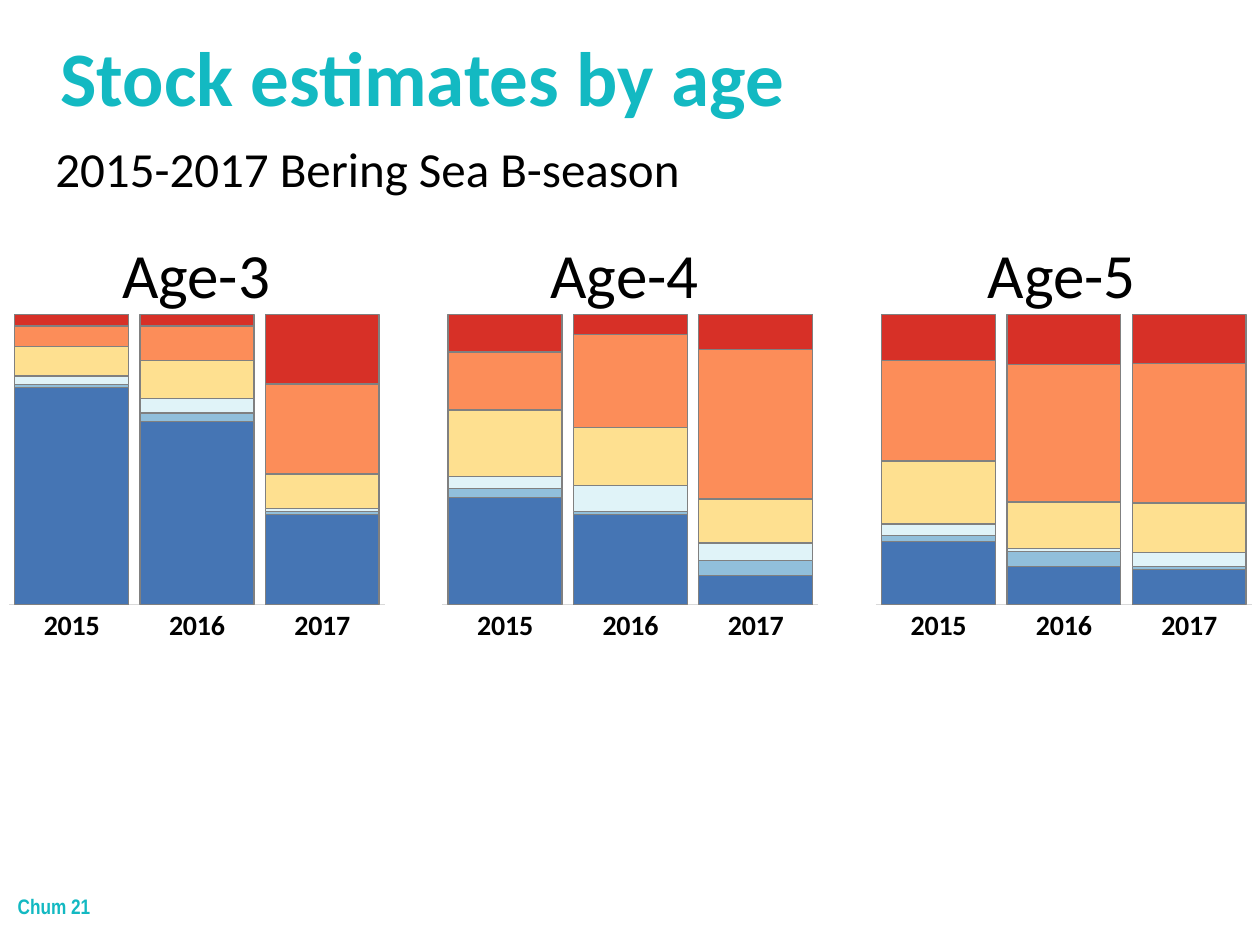
from dataclasses import dataclass

from lxml.etree import SubElement
from pptx import Presentation
from pptx.chart.data import CategoryChartData
from pptx.dml.color import RGBColor
from pptx.enum.chart import XL_CHART_TYPE, XL_TICK_MARK
from pptx.enum.text import MSO_ANCHOR, MSO_AUTO_SIZE, PP_ALIGN
from pptx.oxml.ns import qn
from pptx.util import Emu, Pt

SCALE = 9144  # EMU per px, 100 px to the inch

TEAL = RGBColor(0x13, 0xB9, 0xC2)
BLACK = RGBColor(0x00, 0x00, 0x00)
GREY = RGBColor(0x80, 0x80, 0x80)
PALE = RGBColor(0xD9, 0xD9, 0xD9)
STOCKS = [
    RGBColor(0x45, 0x75, 0xB4),
    RGBColor(0x91, 0xBF, 0xDB),
    RGBColor(0xE0, 0xF3, 0xF8),
    RGBColor(0xFE, 0xE0, 0x90),
    RGBColor(0xFC, 0x8D, 0x59),
    RGBColor(0xD7, 0x30, 0x27),
]
YEARS = ["2015", "2016", "2017"]
PLOT = {"x": 0.004, "y": 0.042, "w": 0.996, "h": 0.841}
LEFT, STEP = 6, 344  # first chart and distance to the next


@dataclass
class Box:
    x: int
    y: int
    w: int
    h: int

    def emu(self) -> list[Emu]:
        return [Emu(n * SCALE) for n in (self.x, self.y, self.w, self.h)]


@dataclass
class Style:
    size: int
    color: RGBColor = BLACK
    bold: bool = False
    face: str = "Calibri"


@dataclass
class Age:
    name: str
    label: int  # left edge of the heading
    rows: list[tuple[int, int, int]]  # one row per stock, one value per year


AGES = [
    Age("Age-3", 87, [(74, 63, 31), (1, 3, 1), (3, 5, 1),
                      (10, 13, 12), (7, 12, 31), (4, 4, 24)]),
    Age("Age-4", 427, [(37, 31, 10), (3, 1, 5), (4, 9, 6),
                       (23, 20, 15), (20, 32, 51), (13, 7, 12)]),
    Age("Age-5", 774, [(22, 13, 12), (2, 5, 1), (4, 1, 5),
                       (22, 16, 17), (35, 47, 48), (16, 17, 17)]),
]


def set_font(font, style: Style) -> None:
    font.name = style.face
    font.size = Pt(style.size)
    font.bold = style.bold
    font.color.rgb = style.color


def write(shape, text: str, style: Style, anchor=MSO_ANCHOR.TOP,
          line: float = 1.0) -> None:
    """Fill a shape with one left-aligned paragraph and no insets."""
    frame = shape.text_frame
    frame.text = text
    frame.word_wrap = True
    frame.auto_size = MSO_AUTO_SIZE.NONE
    frame.vertical_anchor = anchor
    frame.margin_left = frame.margin_right = 0
    frame.margin_top = frame.margin_bottom = 0
    para = frame.paragraphs[0]
    para.alignment = PP_ALIGN.LEFT
    para.line_spacing = line
    set_font(para.runs[0].font, style)


def add_label(slide, box: Box, text: str) -> None:
    frame = slide.shapes.add_textbox(*box.emu()).text_frame
    frame.text = text
    frame.word_wrap = False
    frame.auto_size = MSO_AUTO_SIZE.SHAPE_TO_FIT_TEXT
    set_font(frame.paragraphs[0].runs[0].font, Style(36))


def place_plot(chart) -> None:
    """Fix the inner plot area as fractions of the chart."""
    area = chart.plots[0]._element.getparent()
    for old in area.findall(qn("c:layout")):
        area.remove(old)
    layout = SubElement(area, qn("c:layout"))
    area.insert(0, layout)
    manual = SubElement(layout, qn("c:manualLayout"))
    parts = [("layoutTarget", "inner"), ("xMode", "edge"), ("yMode", "edge")]
    for tag, value in parts + list(PLOT.items()):
        SubElement(manual, qn(f"c:{tag}")).set("val", str(value))


def add_bars(slide, box: Box, age: Age) -> None:
    data = CategoryChartData()
    data.categories = YEARS
    for num, row in enumerate(age.rows, 1):
        data.add_series(f"Series {num}", row)
    chart = slide.shapes.add_chart(
        XL_CHART_TYPE.COLUMN_STACKED_100, *box.emu(), data).chart
    chart.has_legend = False
    chart.has_title = False
    set_font(chart.font, Style(10))
    place_plot(chart)

    # Bars
    plot = chart.plots[0]
    plot.gap_width = 10
    plot.overlap = 100
    plot.vary_by_categories = False
    for series, color in zip(plot.series, STOCKS):
        series.format.fill.solid()
        series.format.fill.fore_color.rgb = color
        series.format.line.color.rgb = GREY
        series.format.line.width = Pt(0.75)

    # Axes
    chart.value_axis.visible = False
    chart.value_axis.has_major_gridlines = False
    axis = chart.category_axis
    axis.major_tick_mark = axis.minor_tick_mark = XL_TICK_MARK.NONE
    axis.format.line.color.rgb = PALE
    axis.format.line.width = Pt(0.75)
    set_font(axis.tick_labels.font, Style(16, bold=True))


def main() -> None:
    deck = Presentation()
    deck.slide_width, deck.slide_height = Emu(1000 * SCALE), Emu(750 * SCALE)
    slide = deck.slides.add_slide(deck.slide_layouts[5])

    # Title, subtitle and footer
    title = slide.shapes.title
    title.left, title.top, title.width, title.height = Box(48, 32, 881, 66).emu()
    write(title, "Stock estimates by age", Style(44, TEAL, True),
          MSO_ANCHOR.BOTTOM, 0.9)
    season = slide.shapes.add_textbox(*Box(44, 117, 936, 65).emu())
    write(season, "2015-2017 Bering Sea B-season", Style(28), line=0.85)
    foot = slide.shapes.add_textbox(*Box(14, 689, 61, 61).emu())
    write(foot, "Chum 21", Style(12, TEAL, True, "Arial Narrow"),
          MSO_ANCHOR.MIDDLE)

    # One chart per age, with its heading above
    for col, age in enumerate(AGES):
        add_bars(slide, Box(LEFT + col * STEP, 238, 300, 274), age)
        add_label(slide, Box(age.label, 182, 139, 71), age.name)

    deck.save("out.pptx")


if __name__ == "__main__":
    main()
